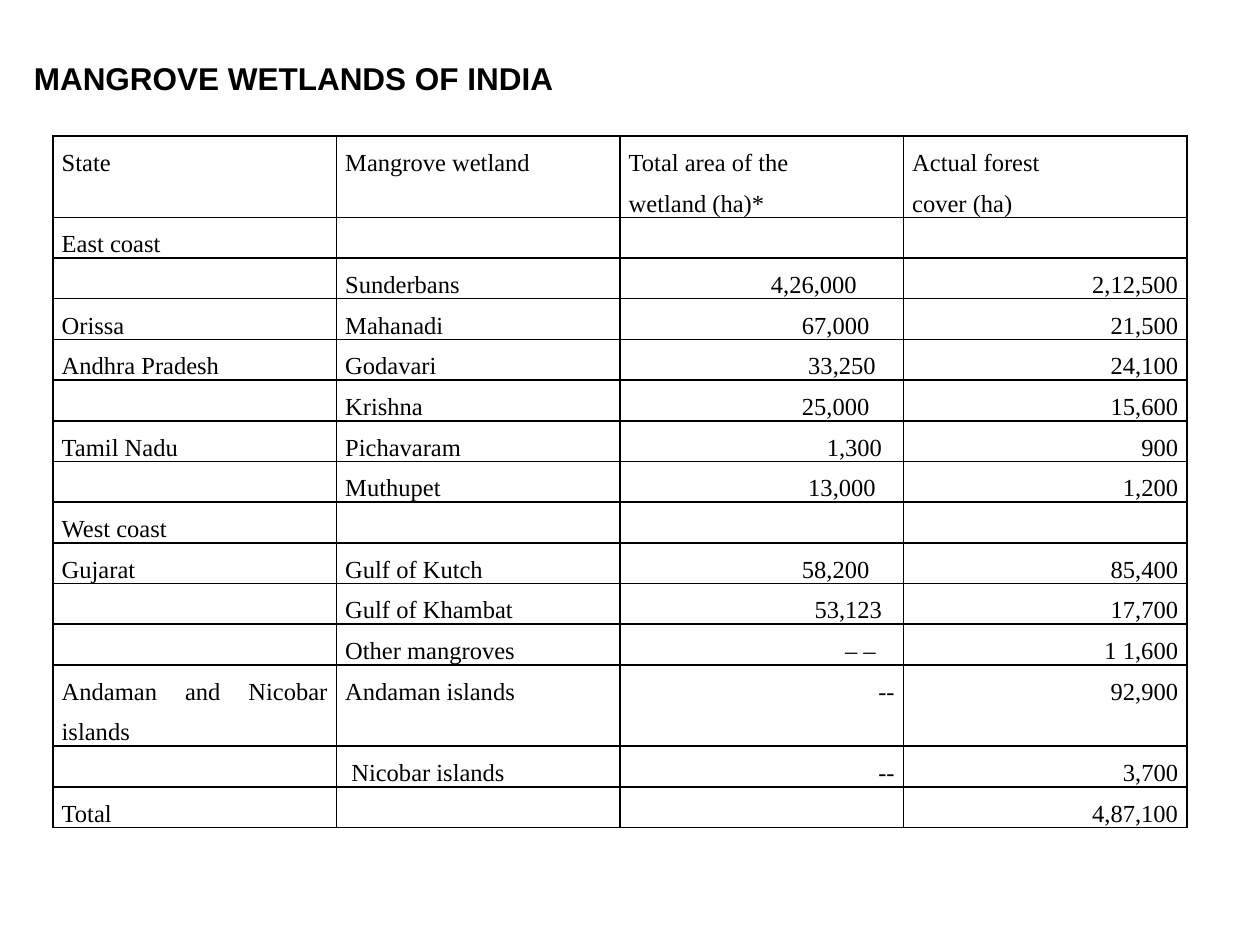
from lxml import etree
from pptx import Presentation
from pptx.dml.color import RGBColor
from pptx.enum.text import MSO_ANCHOR, PP_ALIGN
from pptx.oxml.ns import qn
from pptx.util import Inches, Pt

BLACK = RGBColor(0, 0, 0)
JUSTIFY, RIGHT = PP_ALIGN.JUSTIFY, PP_ALIGN.RIGHT
MIDDLE = MSO_ANCHOR.MIDDLE
SIDE = 0.07
SPACE = 0.05
LINE = 0.29
TALL = (0, 12)
ROWS = [
    ("State", "Mangrove wetland", "Total area of the\nwetland (ha)*", "Actual forest\ncover (ha)"),
    ("East coast", "", "", ""),
    ("", "Sunderbans", "4,26,000", "2,12,500"),
    ("Orissa", "Mahanadi", "67,000", "21,500"),
    ("Andhra Pradesh", "Godavari", "33,250", "24,100"),
    ("", "Krishna", "25,000", "15,600"),
    ("Tamil Nadu", "Pichavaram", "1,300", "900"),
    ("", "Muthupet", "13,000", "1,200"),
    ("West coast", "", "", ""),
    ("Gujarat", "Gulf of Kutch", "58,200", "85,400"),
    ("", "Gulf of Khambat", "53,123", "17,700"),
    ("", "Other mangroves", "– –", "1 1,600"),
    ("Andaman and Nicobar islands", "Andaman islands", "--", "92,900"),
    ("", " Nicobar islands", "--", "3,700"),
    ("Total", "", "", "4,87,100"),
]
AREA_PADS = {2: 6, 3: 4, 4: 3, 5: 4, 6: 2, 7: 3, 9: 4, 10: 2, 11: 3}


def style(frame, font, size, align, bold=False, gap=None):
    """Format every paragraph and run of a text frame."""
    for para in frame.paragraphs:
        para.alignment = align
        para.line_spacing = gap
        for run in para.runs:
            run.font.name = font
            run.font.size = Pt(size)
            run.font.bold = bold
            run.font.color.rgb = BLACK


def add_title(slide, text):
    """Add the heading above the table."""
    box = slide.shapes.add_textbox(Inches(0.17), Inches(0.42), Inches(4.58), Inches(0.4))
    frame = box.text_frame
    frame.word_wrap = True
    frame.vertical_anchor = MIDDLE
    frame.text = text
    style(frame, "Arial", 18, JUSTIFY, bold=True)


def add_border(cell):
    """Draw a thin black line on all four sides of a cell."""
    props = cell._tc.get_or_add_tcPr()
    for spot, side in enumerate(("lnL", "lnR", "lnT", "lnB")):
        line = etree.Element(qn("a:" + side), w=str(Pt(1)))
        fill = etree.SubElement(line, qn("a:solidFill"))
        etree.SubElement(fill, qn("a:srgbClr"), val=str(BLACK))
        props.insert(spot, line)


def fill_cell(cell, text, align, pad):
    """Write one cell, with its right margin widened by pad spaces."""
    cell.fill.background()
    add_border(cell)
    cell.margin_left = Inches(SIDE)
    cell.margin_right = Inches(SIDE + SPACE * pad)
    cell.margin_top = cell.margin_bottom = 0
    if text:
        cell.text_frame.text = text
        style(cell.text_frame, "Times New Roman", 14, align, gap=1.5)


def add_grid(slide):
    """Add the table of wetlands."""
    high = LINE * (len(ROWS) + len(TALL))
    shape = slide.shapes.add_table(
        len(ROWS), 4, Inches(0.42), Inches(1.08), Inches(9), Inches(high))
    table = shape.table
    table.first_row = table.horz_banding = False
    for col in table.columns:
        col.width = Inches(2.25)
    for r, texts in enumerate(ROWS):
        table.rows[r].height = Inches(LINE * 2 if r in TALL else LINE)
        for c, text in enumerate(texts):
            align = RIGHT if r and c > 1 else JUSTIFY
            pad = AREA_PADS.get(r, 0) if c == 2 else 0
            fill_cell(table.cell(r, c), text, align, pad)


def main():
    """Build and save the slide."""
    deck = Presentation()
    deck.slide_width, deck.slide_height = Inches(10), Inches(7.5)
    slide = deck.slides.add_slide(deck.slide_layouts[6])
    add_grid(slide)
    add_title(slide, "MANGROVE WETLANDS OF INDIA")
    deck.save("out.pptx")


if __name__ == "__main__":
    main()
